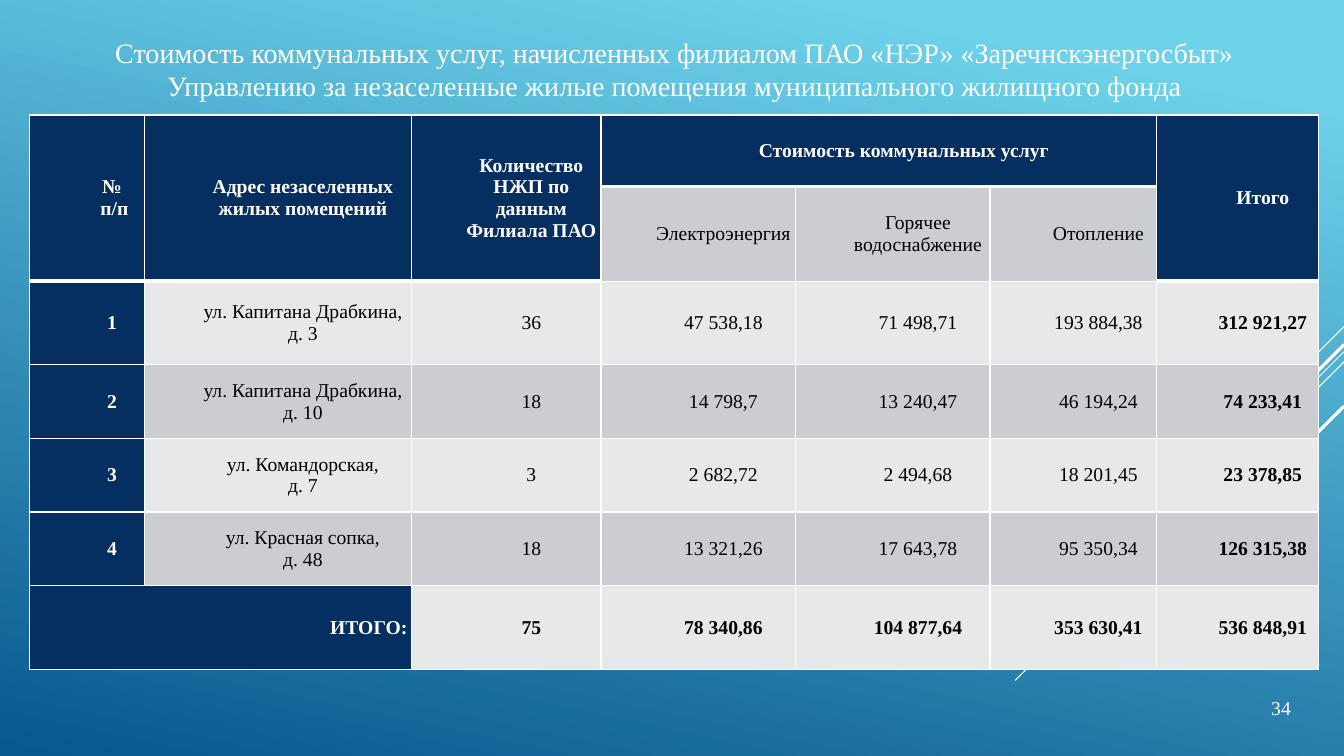
from lxml import etree
from pptx import Presentation
from pptx.dml.color import RGBColor
from pptx.enum.shapes import MSO_CONNECTOR
from pptx.enum.text import MSO_ANCHOR, PP_ALIGN
from pptx.oxml.ns import qn
from pptx.util import Inches, Pt

STRAIGHT = MSO_CONNECTOR.STRAIGHT
MIDDLE = MSO_ANCHOR.MIDDLE
LEFT, CENTER, RIGHT = PP_ALIGN.LEFT, PP_ALIGN.CENTER, PP_ALIGN.RIGHT

FONT = "Times New Roman"
WHITE, BLACK, NAVY = "FFFFFF", "000000", "052F61"
LIGHT, GREY = "E7E8EA", "CCCDD2"

TITLE = ("Стоимость коммунальных услуг, начисленных филиалом ПАО «НЭР» "
         "«Заречнскэнергосбыт» Управлению за незаселенные жилые помещения "
         "муниципального жилищного фонда")

# Right end x, y and length along each axis, weight
RAYS = [(13.33, 3.24, 1, 0.75), (13.33, 3.49, 3.26, 0.75),
        (13.33, 3.59, 2.07, 0.75), (13.33, 3.42, 1.91, 2.25),
        (13.33, 4.03, 1.39, 2.25)]

COLS = [1.14, 2.65, 1.88, 1.93, 1.93, 1.65, 1.61]
ROWS = [0.71, 0.94, 0.83, 0.73, 0.73, 0.73, 0.83]
TALL = (0, 1, 2, 6)  # columns whose heading spans two rows
DATA = [
    ["№\n п/п", "Адрес незаселенных жилых помещений",
     "Количество НЖП по данным Филиала ПАО",
     "Стоимость коммунальных услуг", "", "", "Итого"],
    ["", "", "", "Электроэнергия", "Горячее водоснабжение", "Отопление", ""],
    ["1", "ул. Капитана Драбкина, д. 3", "36",
     "47 538,18", "71 498,71", "193 884,38", "312 921,27"],
    ["2", "ул. Капитана Драбкина, д. 10", "18",
     "14 798,7", "13 240,47", "46 194,24", "74 233,41"],
    ["3", "ул. Командорская,\nд. 7", "3",
     "2 682,72", "2 494,68", "18 201,45", "23 378,85"],
    ["4", "ул. Красная сопка,\nд. 48", "18",
     "13 321,26", "17 643,78", "95 350,34", "126 315,38"],
    ["ИТОГО:", "", "75",
     "78 340,86", "104 877,64", "353 630,41", "536 848,91"],
]


def color(code):
    return RGBColor.from_string(code)


def style(par, size, tint, bold, align):
    par.alignment = align
    font = par.font
    font.name, font.size, font.bold = FONT, Pt(size), bold
    font.color.rgb = color(tint)


def add_back(slide):
    fill = slide.background.fill
    fill.gradient()
    fill.gradient_angle = 258
    stops = zip(fill.gradient_stops, [(0.1, "6ED2EB"), (1, "06588E")])
    for stop, (pos, tint) in stops:
        stop.position = pos
        stop.color.rgb = color(tint)


def add_rays(slide):
    for x, y, size, weight in RAYS:
        ray = slide.shapes.add_connector(
            STRAIGHT, Inches(x), Inches(y), Inches(x - size), Inches(y + size))
        ray.line.color.rgb = color(WHITE)
        ray.line.width = Pt(weight)
        etree.SubElement(ray._element.spPr, qn("a:effectLst"))


def add_text(slide, box, text, size, align, wrap):
    frame = slide.shapes.add_textbox(*map(Inches, box)).text_frame
    frame.word_wrap = wrap
    frame.text = text
    style(frame.paragraphs[0], size, WHITE, False, align)


def set_edges(cell, base):
    props = cell._tc.get_or_add_tcPr()
    for side, weight in zip("LRTB", (1, 1, 1, base)):
        edge = etree.SubElement(props, qn("a:ln" + side), w=str(Pt(weight)))
        fill = etree.SubElement(edge, qn("a:solidFill"))
        etree.SubElement(fill, qn("a:srgbClr"), val=WHITE)


def fill_cell(cell, row, col):
    last = len(ROWS) - 1
    tall = row < 2 and col in TALL
    dark = row == 0 or tall or col == 0 or (row == last and col == 1)
    set_edges(cell, 3 if row == 0 or tall else 1)
    cell.fill.solid()
    cell.fill.fore_color.rgb = color(
        NAVY if dark else GREY if row % 2 else LIGHT)
    cell.vertical_anchor = MIDDLE
    cell.margin_left = cell.margin_right = Inches(0.04)
    cell.margin_top = cell.margin_bottom = 0
    cell.text = DATA[row][col]
    bold = dark or row == last or col == len(COLS) - 1
    align = RIGHT if row == last and col == 0 else CENTER
    for par in cell.text_frame.paragraphs:
        par._p.get_or_add_pPr().set("marL", str(Inches(0.5)))
        style(par, 14, WHITE if dark else BLACK, bold, align)


def add_costs(slide, box):
    table = slide.shapes.add_table(
        len(ROWS), len(COLS), *map(Inches, box)).table
    table.first_row = table.horz_banding = False
    for col, width in zip(table.columns, COLS):
        col.width = Inches(width)
    for row, height in zip(table.rows, ROWS):
        row.height = Inches(height)
    for row in range(len(ROWS)):
        for col in range(len(COLS)):
            fill_cell(table.cell(row, col), row, col)
    # Merged headings and total label
    for col in TALL:
        table.cell(0, col).merge(table.cell(1, col))
    table.cell(0, 3).merge(table.cell(0, 5))
    table.cell(6, 0).merge(table.cell(6, 1))


def main():
    deck = Presentation()
    deck.slide_width, deck.slide_height = Inches(13.33), Inches(7.5)
    slide = deck.slides.add_slide(deck.slide_layouts[6])
    add_back(slide)
    add_rays(slide)
    add_costs(slide, (0.29, 1.14, 12.8, 5.5))
    add_text(slide, (0.29, 0.3, 12.8, 0.77), TITLE, 20, CENTER, True)
    add_text(slide, (12.51, 6.86, 0.4, 0.34), "34", 14, LEFT, False)
    deck.save("out.pptx")


if __name__ == "__main__":
    main()
